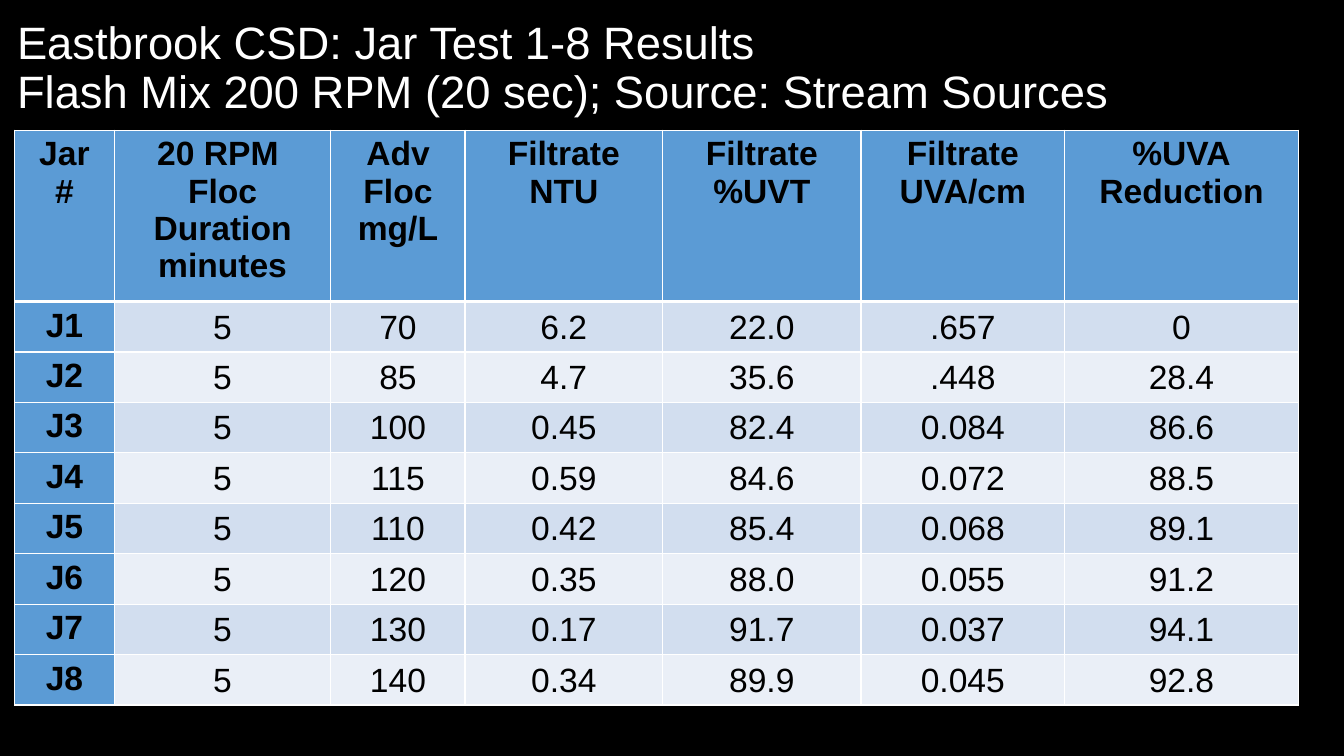
from lxml import etree
from pptx import Presentation
from pptx import util as u
from pptx.dml.color import RGBColor
from pptx.enum import text
from pptx.oxml.ns import qn


def color(value):
    return RGBColor.from_string(value)


def add_run(p, words, size, value, bold=False):
    r = p.add_run()
    r.text = words
    r.font.name = "Arial"
    r.font.size = u.Pt(size)
    r.font.bold = bold
    r.font.color.rgb = color(value)


prs = Presentation()
prs.slide_width, prs.slide_height = u.Cm(33.87), u.Cm(19.05)
s = prs.slides.add_slide(prs.slide_layouts[6])
s.background.fill.solid()
s.background.fill.fore_color.rgb = color("000000")

title = s.shapes.add_textbox(u.Cm(0.18), u.Cm(0.3), u.Cm(33.1), u.Cm(2.9))
tf = title.text_frame
tf.word_wrap = True
tf.vertical_anchor = text.MSO_ANCHOR.MIDDLE
p = tf.paragraphs[0]
p.line_spacing = 0.9
add_run(p, "Eastbrook CSD: Jar Test 1-8 Results", 32.4, "FFFFFF")
p.add_line_break()
add_run(p, "Flash Mix 200 RPM (20 sec); Source: Stream Sources", 32.4, "FFFFFF")

rows = [
    ["Jar\n#", "20 RPM \nFloc\nDuration\nminutes", "Adv\nFloc\nmg/L", "Filtrate\nNTU",
     "Filtrate\n%UVT", "Filtrate\nUVA/cm", "%UVA\nReduction"],
    ["J1", "5", "70", "6.2", "22.0", ".657", "0"],
    ["J2", "5", "85", "4.7", "35.6", ".448", "28.4"],
    ["J3", "5", "100", "0.45", "82.4", "0.084", "86.6"],
    ["J4", "5", "115", "0.59", "84.6", "0.072", "88.5"],
    ["J5", "5", "110", "0.42", "85.4", "0.068", "89.1"],
    ["J6", "5", "120", "0.35", "88.0", "0.055", "91.2"],
    ["J7", "5", "130", "0.17", "91.7", "0.037", "94.1"],
    ["J8", "5", "140", "0.34", "89.9", "0.045", "92.8"],
]
widths = [2.51, 5.46, 3.38, 4.98, 5.0, 5.13, 5.89]
heights = [4.02] + [1.2] * 8

table = s.shapes.add_table(len(rows), len(widths), u.Cm(0.37), u.Cm(3.28),
                           u.Cm(sum(widths)), u.Cm(sum(heights))).table
for column, width in zip(table.columns, widths):
    column.width = u.Cm(width)
for row, height in zip(table.rows, heights):
    row.height = u.Cm(height)

for i, row in enumerate(rows):
    for j, words in enumerate(row):
        cell = table.cell(i, j)
        heading = i == 0 or j == 0
        if not heading:
            cell.vertical_anchor = text.MSO_ANCHOR.MIDDLE
            cell.margin_left = cell.margin_right = cell.margin_top = u.Cm(0.03)
            cell.margin_bottom = 0
        for k, line in enumerate(words.split("\n")):
            p = cell.text_frame.paragraphs[0] if k == 0 else cell.text_frame.add_paragraph()
            p.alignment = text.PP_ALIGN.CENTER
            add_run(p, line, 24, "000000", heading)

        tcPr = cell._tc.get_or_add_tcPr()
        for side in ("L", "R", "T", "B"):
            thick = (i, side) in ((0, "B"), (1, "T"))
            ln = etree.SubElement(tcPr, qn(f"a:ln{side}"), w=str(u.Pt(3 if thick else 1)))
            fill = etree.SubElement(ln, qn("a:solidFill"))
            etree.SubElement(fill, qn("a:srgbClr"), val="FFFFFF")
        cell.fill.solid()
        band = "D2DEEF" if i % 2 else "EAEFF7"
        cell.fill.fore_color.rgb = color("5B9BD5" if heading else band)

prs.save("out.pptx")
